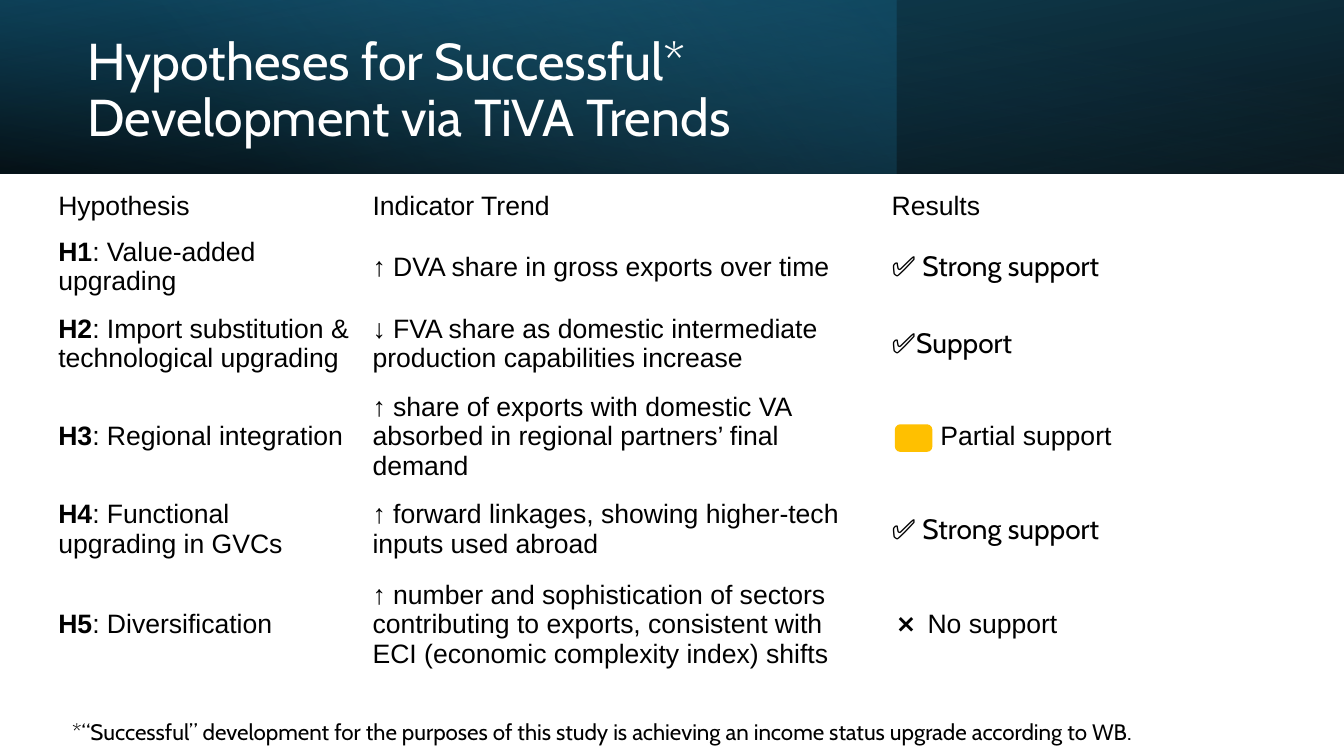
from lxml import etree
from pptx import Presentation
from pptx.dml.color import RGBColor
from pptx.enum.shapes import MSO_SHAPE
from pptx.enum.text import MSO_ANCHOR
from pptx.oxml.ns import qn
from pptx.util import Cm, Pt

RECTANGLE = MSO_SHAPE.RECTANGLE
ROUNDED = MSO_SHAPE.ROUNDED_RECTANGLE
MIDDLE = MSO_ANCHOR.MIDDLE
COLOURS = {"black": "000000", "white": "FFFFFF", "navy": "104862",
           "teal": "156082", "sky": "46B1E1", "amber": "FFC000"}


def add_span(para, text, size, font="Arial", colour="black", bold=False):
    span = para.add_run()
    span.text = text
    span.font.size = Pt(size)
    span.font.name = font
    span.font.bold = bold
    span.font.color.rgb = RGBColor.from_string(COLOURS[colour])


def add_gradient_band(page, width, angle, stops):
    """Add a header band; each stop is (position %, colour, opacity %)."""
    band = page.shapes.add_shape(RECTANGLE, 0, 0, width, Cm(4.37))
    band.shadow.inherit = False
    band.line.fill.background()
    band.fill.gradient()
    band.fill.gradient_angle = 360 - angle
    stop_list = band.fill._fill._gradFill.find(qn("a:gsLst"))
    for old_stop in list(stop_list):
        stop_list.remove(old_stop)
    for position, colour, opacity in stops:
        stop = etree.SubElement(stop_list, qn("a:gs"), pos=str(position * 1000))
        tint = etree.SubElement(stop, qn("a:srgbClr"), val=COLOURS[colour])
        etree.SubElement(tint, qn("a:alpha"), val=str(opacity * 1000))
    return band


deck = Presentation()
deck.slide_width = Cm(33.87)
deck.slide_height = Cm(19.05)
page = deck.slides.add_slide(deck.slide_layouts[6])

# Header: three layered gradients
base = add_gradient_band(page, deck.slide_width, 100,
                         [(0, "black", 96), (100, "navy", 100)])
base.rotation = 180
add_gradient_band(page, Cm(22.58), 140, [(0, "teal", 41), (74, "sky", 0)])
shade = add_gradient_band(page, deck.slide_width, 260,
                          [(0, "black", 63), (78, "teal", 15)])
for band in (base, shade):
    band._element.spPr.find(qn("a:xfrm")).set("flipH", "1")

# Title and footnote
texts = [
    ("Hypotheses for Successful* Development via TiVA Trends",
     (1.96, 0.69, 19.61, 3.23), 37, "white", 0),
    ("*“Successful” development for the purposes of this study is achieving "
     "an income status upgrade according to WB.",
     (1.57, 18.06, 29.21, 1.96), 16, "black", 10),
]
for text, place, size, colour, space in texts:
    box = page.shapes.add_textbox(*[Cm(length) for length in place])
    box.text_frame.word_wrap = True
    para = box.text_frame.paragraphs[0]
    para.line_spacing = 0.9
    para.space_before = Pt(space)
    add_span(para, text, size, "Cabin", colour)
    if colour == "white":
        box.text_frame.vertical_anchor = MIDDLE

# Hypothesis table: each cell is a list of (text, size, font, bold)
def_size = 19
hypotheses = [
    ("H1", ": Value-added upgrading",
     "↑ DVA share in gross exports over time", "✅ Strong support"),
    ("H2", ": Import substitution & technological upgrading",
     "↓ FVA share as domestic intermediate production capabilities increase",
     "✅Support"),
    ("H3", ": Regional integration",
     "↑ share of exports with domestic VA absorbed in regional partners’ final demand",
     "Partial support"),
    ("H4", ": Functional upgrading in GVCs",
     "↑ forward linkages, showing higher-tech inputs used abroad",
     "✅ Strong support"),
    ("H5", ": Diversification",
     "↑ number and sophistication of sectors contributing to exports, "
     "consistent with ECI (economic complexity index) shifts", "❌  No support"),
]
rows = [[[(name, def_size, "Arial", False)]
         for name in ("Hypothesis", "Indicator Trend", "Results")]]
for number, name, trend, result in hypotheses:
    if result.startswith("✅"):
        verdict = [(result, 20, "Cabin", False)]
    elif result.startswith("❌"):
        verdict = [(result[:2], 18, "Cabin", True),
                   (result[2:], def_size, "Arial", False)]
    else:
        verdict = [(result, def_size, "Arial", False)]
    rows.append([[(number, def_size, "Arial", True),
                  (name, def_size, "Arial", False)],
                 [(trend, def_size, "Arial", False)], verdict])

column_widths = [7.92, 13.08, 10.46]
row_heights = [1.19, 1.78, 2.0, 2.49, 2.0, 2.82]
table = page.shapes.add_table(len(rows), len(column_widths), Cm(1.19), Cm(4.6),
                              Cm(sum(column_widths)), Cm(sum(row_heights))).table
table.first_row = False
table.horz_banding = False
for column, width in zip(table.columns, column_widths):
    column.width = Cm(width)
for row, height, contents in zip(table.rows, row_heights, rows):
    row.height = Cm(height)
    for cell, spans in zip(row.cells, contents):
        cell.fill.background()
        cell.vertical_anchor = MIDDLE
        cell.margin_left = cell.margin_right = Cm(0.28)
        cell.margin_top = cell.margin_bottom = Cm(0.13)
        for text, size, font, bold in spans:
            add_span(cell.text_frame.paragraphs[0], text, size, font, bold=bold)

# Indented results: room for the amber marker, and the cross
table.cell(3, 2).margin_left = Cm(1.51)
table.cell(5, 2).margin_left = Cm(0.43)

# Amber marker for partial support
marker = page.shapes.add_shape(ROUNDED, Cm(22.58), Cm(10.72), Cm(0.89), Cm(0.64))
marker.shadow.inherit = False
marker.fill.solid()
marker.fill.fore_color.rgb = RGBColor.from_string(COLOURS["amber"])
marker.line.color.rgb = RGBColor.from_string(COLOURS["amber"])
marker.line.width = Pt(1.5)

deck.save("out.pptx")
